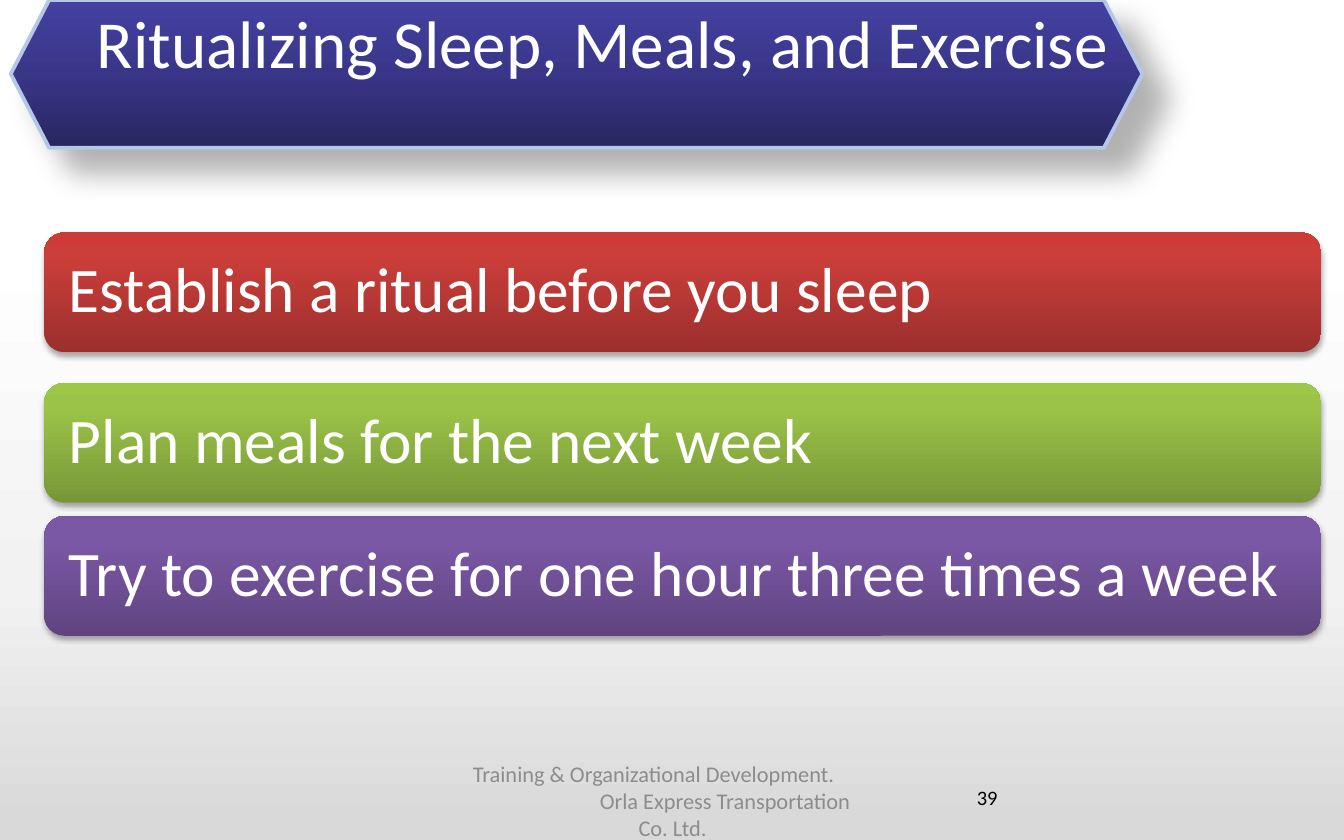
import dataclasses

import pptx
import pptx.dml.color
import pptx.enum.shapes
import pptx.enum.text
import pptx.oxml.ns
import pptx.util
from lxml import etree

Inches = pptx.util.Inches
Pt = pptx.util.Pt
SHAPE = pptx.enum.shapes.MSO_SHAPE
ALIGN = pptx.enum.text.PP_ALIGN
ANCHOR = pptx.enum.text.MSO_ANCHOR
qn = pptx.oxml.ns.qn


@dataclasses.dataclass(frozen=True)
class Theme:
    font: str = "Calibri"
    title_size: float = 36
    bar_size: float = 34
    footer_size: float = 12
    number_size: float = 11
    light: str = "FFFFFF"
    muted: str = "8C8C8C"
    dark: str = "000000"
    outline: str = "B4C7E7"
    # Gradients run from bottom to top: (percent, colour)
    backdrop: tuple = ((2, "D9D9D9"), (30, "F2F2F2"), (71, "FFFFFF"))
    banner: tuple = ((0, "282660"), (50, "393689"), (100, "4441A2"))
    red: tuple = ((0, "9C2F2D"), (80, "CB3E3A"), (100, "CE3B37"))
    green: tuple = ((0, "779737"), (80, "9BC348"), (100, "9DC746"))
    purple: tuple = ((0, "5F4480"), (80, "7B58A6"), (100, "7C57A8"))
    # Shadows: opacity percent, blur and distance in points, angle
    banner_shadow: tuple = (30, 15, 18, 45)
    bar_shadow: tuple = (35, 3.1, 1.8, 90)


class SlideBuilder:
    def __init__(self, slide, theme):
        self.slide = slide
        self.theme = theme

    def gradient(self, fill, owner, stops):
        """Fill upwards through all stops; owner is the XML element holding the fill."""
        fill.gradient()
        fill.gradient_angle = 90
        stop_list = next(owner.iter(qn("a:gsLst")))
        for stop in list(stop_list):
            stop_list.remove(stop)
        for percent, color in stops:
            stop = etree.SubElement(stop_list, qn("a:gs"), pos=str(percent * 1000))
            etree.SubElement(stop, qn("a:srgbClr"), val=color)

    def background(self, stops):
        self.gradient(self.slide.background.fill, self.slide._element, stops)

    def shadow(self, shape, opacity, blur, distance, angle):
        shape.shadow.inherit = False
        effects = shape._element.spPr.find(qn("a:effectLst"))
        outer = etree.SubElement(
            effects, qn("a:outerShdw"), blurRad=str(Pt(blur)), dist=str(Pt(distance)),
            dir=str(angle * 60000), algn="tl", rotWithShape="0")
        color = etree.SubElement(outer, qn("a:srgbClr"), val=self.theme.dark)
        etree.SubElement(color, qn("a:alpha"), val=str(opacity * 1000))

    def style(self, paragraph, size, color, align=ALIGN.LEFT):
        paragraph.alignment = align
        paragraph.font.name = self.theme.font
        paragraph.font.size = Pt(size)
        paragraph.font.color.rgb = pptx.dml.color.RGBColor.from_string(color)

    def panel(self, preset, left, top, width, height, stops, shadow):
        shape = self.slide.shapes.add_shape(
            preset, Inches(left), Inches(top), Inches(width), Inches(height))
        self.gradient(shape.fill, shape._element, stops)
        shape.line.fill.background()
        self.shadow(shape, *shadow)
        return shape

    def banner(self, left, top, width, height):
        """Add the hexagon behind everything else on the slide."""
        hexagon = self.panel(SHAPE.HEXAGON, left, top, width, height,
                             self.theme.banner, self.theme.banner_shadow)
        hexagon.adjustments[0] = 0.26
        hexagon.line.color.rgb = pptx.dml.color.RGBColor.from_string(self.theme.outline)
        hexagon.line.width = Pt(2)
        self.slide.shapes._spTree.insert(2, hexagon._element)

    def title(self, text, left, top, width, height):
        title = self.slide.shapes.title
        title.left, title.top = Inches(left), Inches(top)
        title.width, title.height = Inches(width), Inches(height)
        frame = title.text_frame
        frame.text = text
        frame.word_wrap = True
        frame.vertical_anchor = ANCHOR.MIDDLE
        self.style(frame.paragraphs[0], self.theme.title_size, self.theme.light)

    def bar(self, text, top, stops):
        bar = self.panel(SHAPE.ROUNDED_RECTANGLE, 0.33, top, 9.5, 0.89,
                         stops, self.theme.bar_shadow)
        frame = bar.text_frame
        frame.text = text
        frame.word_wrap = True
        frame.vertical_anchor = ANCHOR.MIDDLE
        frame.margin_left = frame.margin_right = Inches(0.14)
        frame.margin_top = frame.margin_bottom = Inches(0.14)
        frame.paragraphs[0].line_spacing = 0.9
        self.style(frame.paragraphs[0], self.theme.bar_size, self.theme.light)

    def note(self, lines, left, width, size, color, anchor):
        """Add a bottom text box; each line is (text, alignment, left indent)."""
        box = self.slide.shapes.add_textbox(
            Inches(left), Inches(5.79), Inches(width), Inches(0.33))
        frame = box.text_frame
        frame.word_wrap = True
        frame.vertical_anchor = anchor
        frame.text = "\n".join(text for text, _, _ in lines)
        for paragraph, (_, align, indent) in zip(frame.paragraphs, lines):
            self.style(paragraph, size, color, align)
            if indent:
                paragraph._p.get_or_add_pPr().set("marL", str(Inches(indent)))


def main():
    theme = Theme()
    deck = pptx.Presentation()
    deck.slide_width, deck.slide_height = Inches(10), Inches(6.25)
    title_only = deck.slide_layouts[5]
    builder = SlideBuilder(deck.slides.add_slide(title_only), theme)

    builder.background(theme.backdrop)
    builder.banner(0.08, 0, 8.42, 1.1)
    builder.title("Ritualizing Sleep, Meals, and Exercise", 0.62, -0.21, 9, 1.04)

    habits = [
        ("Establish a ritual before you sleep", 1.73, theme.red),
        ("Plan meals for the next week", 2.85, theme.green),
        ("Try to exercise for one hour three times a week", 3.84, theme.purple),
    ]
    for habit, top, stops in habits:
        builder.bar(habit, top, stops)

    footer = [
        ("Training & Organizational Development.", ALIGN.LEFT, 0),
        ("Orla Express Transportation", ALIGN.CENTER, 0.78),
        ("Co. Ltd.", ALIGN.CENTER, 0),
    ]
    builder.note(footer, 3.42, 3.17, theme.footer_size, theme.muted, ANCHOR.MIDDLE)
    builder.note([("39", ALIGN.LEFT, 0)], 7.17, 2.33,
                 theme.number_size, theme.dark, ANCHOR.TOP)

    deck.save("out.pptx")


if __name__ == "__main__":
    main()
